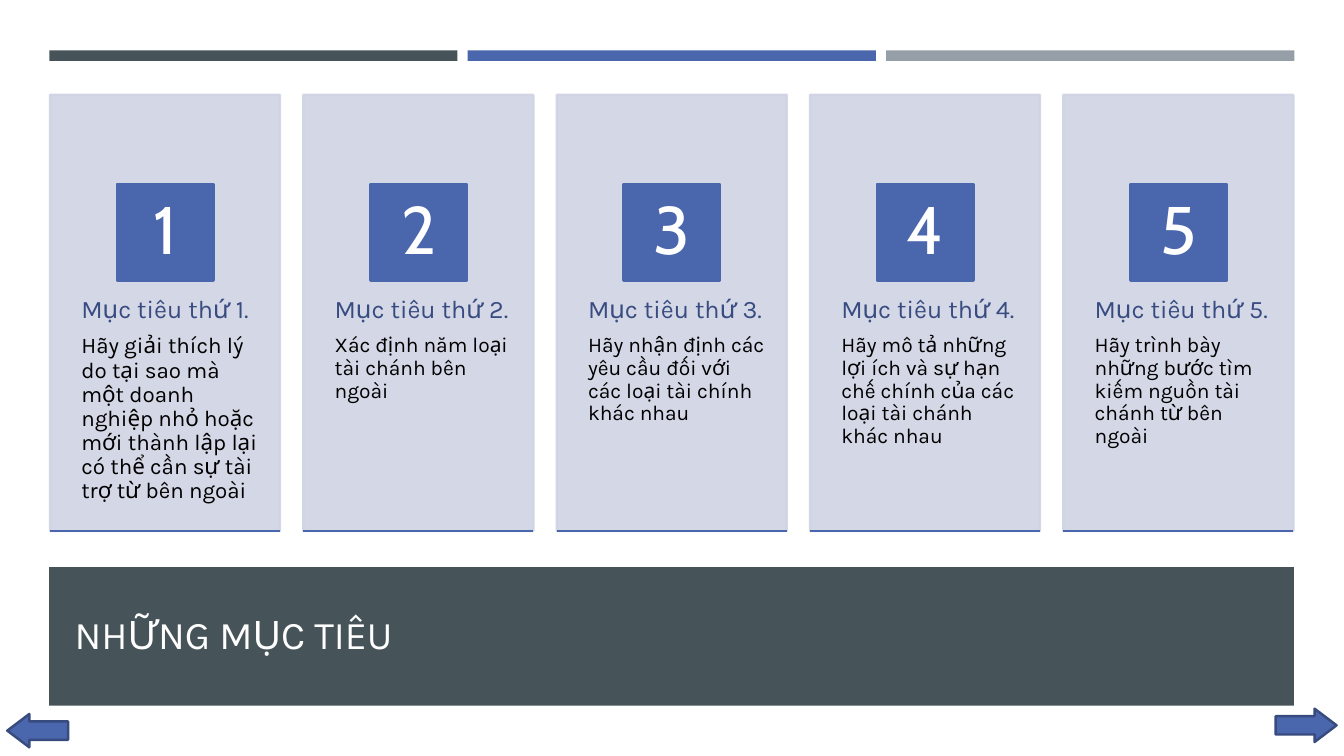
from lxml.etree import SubElement
from pptx import Presentation
from pptx.dml.color import RGBColor
from pptx.enum.shapes import MSO_CONNECTOR as CONN, MSO_SHAPE as SHAPE
from pptx.enum.text import MSO_ANCHOR as ANCHOR, PP_ALIGN as ALIGN
from pptx.oxml.ns import qn
from pptx.util import Pt

SLATE, BLUE, GRAY, CARD = "465359", "4A66AC", "969FA7", "D0D3E3"
WHITE, BLACK, HEADING, ARROW_EDGE = "FFFFFF", "000000", "384C81", "374B7F"


def rgb(value):
    return RGBColor.from_string(value)


def set_attrs(obj, values):
    for name, value in values.items():
        setattr(obj, name, value)


class SlideBuilder:
    line_width = Pt(1.75)
    spacing = {"line_spacing": 0.9, "space_after": Pt(7.5)}

    def __init__(self, prs):
        self.s = prs.slides.add_slide(prs.slide_layouts[6])

    def shape(self, kind, x, y, w, h, fill, line=None, alpha=None):
        sp = self.s.shapes.add_shape(kind, Pt(x), Pt(y), Pt(w), Pt(h))
        sp.shadow.inherit = False
        sp.fill.solid()
        sp.fill.fore_color.rgb = rgb(fill)
        if line:
            sp.line.color.rgb = rgb(line)
            sp.line.width = self.line_width
        else:
            sp.line.fill.background()
        if alpha:
            for clr in sp._element.spPr.iter(qn("a:srgbClr")):
                SubElement(clr, qn("a:alpha"), val=str(alpha * 1000))
        return sp

    def rule(self, x, y, w, color):
        cxn = self.s.shapes.add_connector(CONN.STRAIGHT, Pt(x), Pt(y), Pt(x + w), Pt(y))
        cxn.line.color.rgb = rgb(color)
        cxn.line.width = self.line_width
        SubElement(cxn._element.spPr, qn("a:effectLst"))

    def fill_text(self, sp, runs, insets, anchor=ANCHOR.TOP, **para):
        tf = sp.text_frame
        left, top, right, bottom = map(Pt, insets)
        set_attrs(tf, {"word_wrap": True, "vertical_anchor": anchor,
                       "margin_left": left, "margin_top": top,
                       "margin_right": right, "margin_bottom": bottom})
        for i, (text, size, font, color) in enumerate(runs):
            p = tf.add_paragraph() if i else tf.paragraphs[0]
            set_attrs(p, {"alignment": ALIGN.LEFT, **para})
            r = p.add_run()
            r.text = text
            set_attrs(r.font, {"size": Pt(size), "name": font})
            r.font.color.rgb = rgb(color)

    def text(self, x, y, w, h, runs, insets, **fmt):
        sp = self.s.shapes.add_textbox(Pt(x), Pt(y), Pt(w), Pt(h))
        self.fill_text(sp, runs, insets, **fmt)

    def card(self, x, number, body, size):
        w = 164.2
        self.shape(SHAPE.RECTANGLE, x, 67.7, w, 311.6, CARD, CARD, 90)
        heading = (f"Mục tiêu thứ {number}.", 18, "Karla", HEADING)
        self.text(x, 186, w, 187, [heading, (body, size, "Karla", BLACK)],
                  (22.3, 26, 13, 26), **self.spacing)
        badge = self.shape(SHAPE.RECTANGLE, x + 47.8, 131.5, 69, 69, BLUE, BLUE)
        self.fill_text(badge, [(str(number), 48, "Cabin", WHITE)], (5, 1, 5, 1),
                       ANCHOR.MIDDLE, **self.spacing, alignment=ALIGN.CENTER)
        self.rule(x, 379.3, w, BLUE)

    def arrow(self, x, y, rotation=0):
        sp = self.shape(SHAPE.RIGHT_ARROW, x, y, 43.5, 23.8, BLUE, ARROW_EDGE)
        sp.rotation = rotation
        sp.adjustments[0], sp.adjustments[1] = 0.55, 0.66


GOALS = [
    ("Hãy giải thích lý do tại sao mà một doanh nghiệp nhỏ hoặc mới thành lập lại "
     "có thể cần sự tài trợ từ bên ngoài", 16),
    ("Xác định năm loại tài chánh bên ngoài", 15),
    ("Hãy nhận định các yêu cầu đối với các loại tài chính khác nhau", 15),
    ("Hãy mô tả những lợi ích và sự hạn chế chính của các loại tài chánh khác nhau", 15),
    ("Hãy trình bày những bước tìm kiếm nguồn tài chánh từ bên ngoài", 15),
]


def main():
    prs = Presentation()
    set_attrs(prs, {"slide_width": Pt(960), "slide_height": Pt(540)})
    slide = SlideBuilder(prs)
    slide.shape(SHAPE.RECTANGLE, 35.2, 405, 889, 99, SLATE)
    slide.text(46.2, 415, 868, 75.6, [("NHỮNG MỤC TIÊU", 28, "Karla", "FFFEFF")],
               (7.2, 3.6, 7.2, 3.6), anchor=ANCHOR.MIDDLE)
    for i, color in enumerate((SLATE, BLUE, GRAY)):
        slide.shape(SHAPE.RECTANGLE, 35.2 + 298.9 * i, 36, 291.6, 7.5, color)
    for i, (body, size) in enumerate(GOALS):
        slide.card(35.8 + 180.95 * i, i + 1, body, size)
    slide.arrow(911.2, 506.2)
    slide.arrow(5.2, 510, 180)
    prs.save("out.pptx")


if __name__ == "__main__":
    main()
